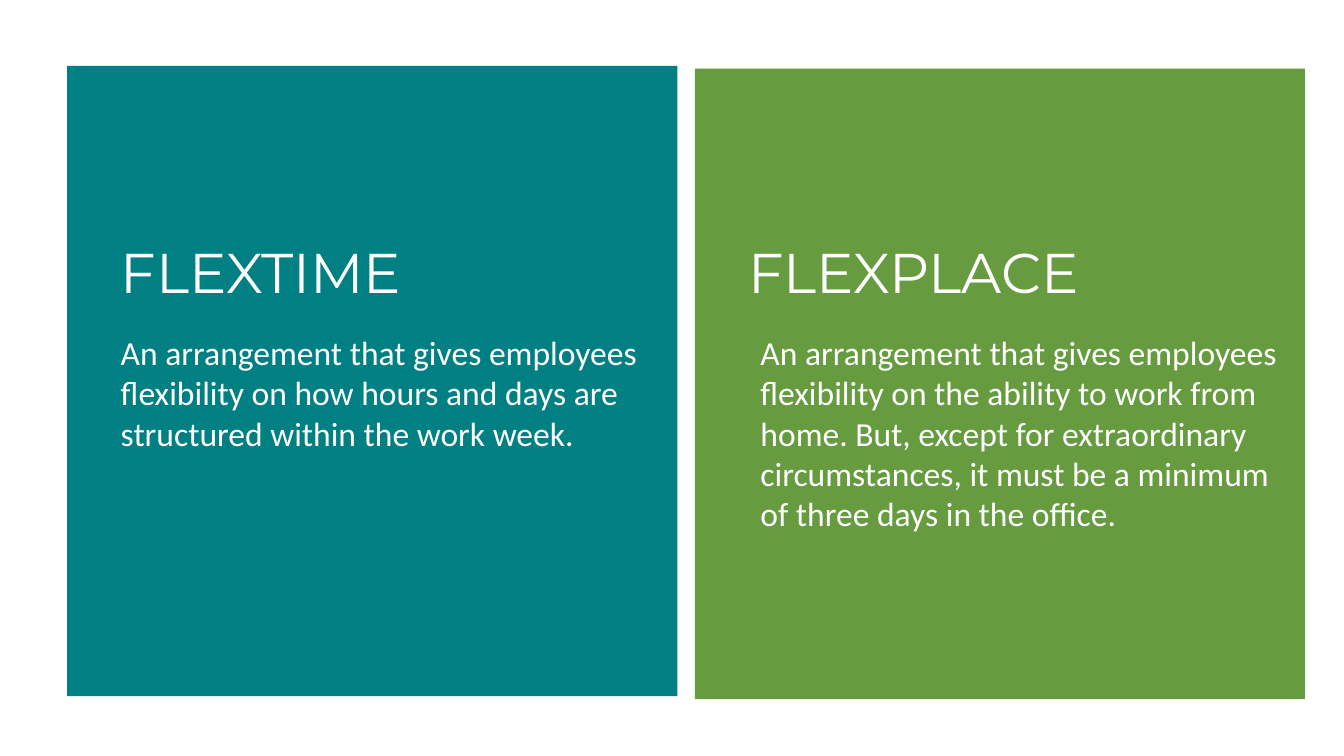
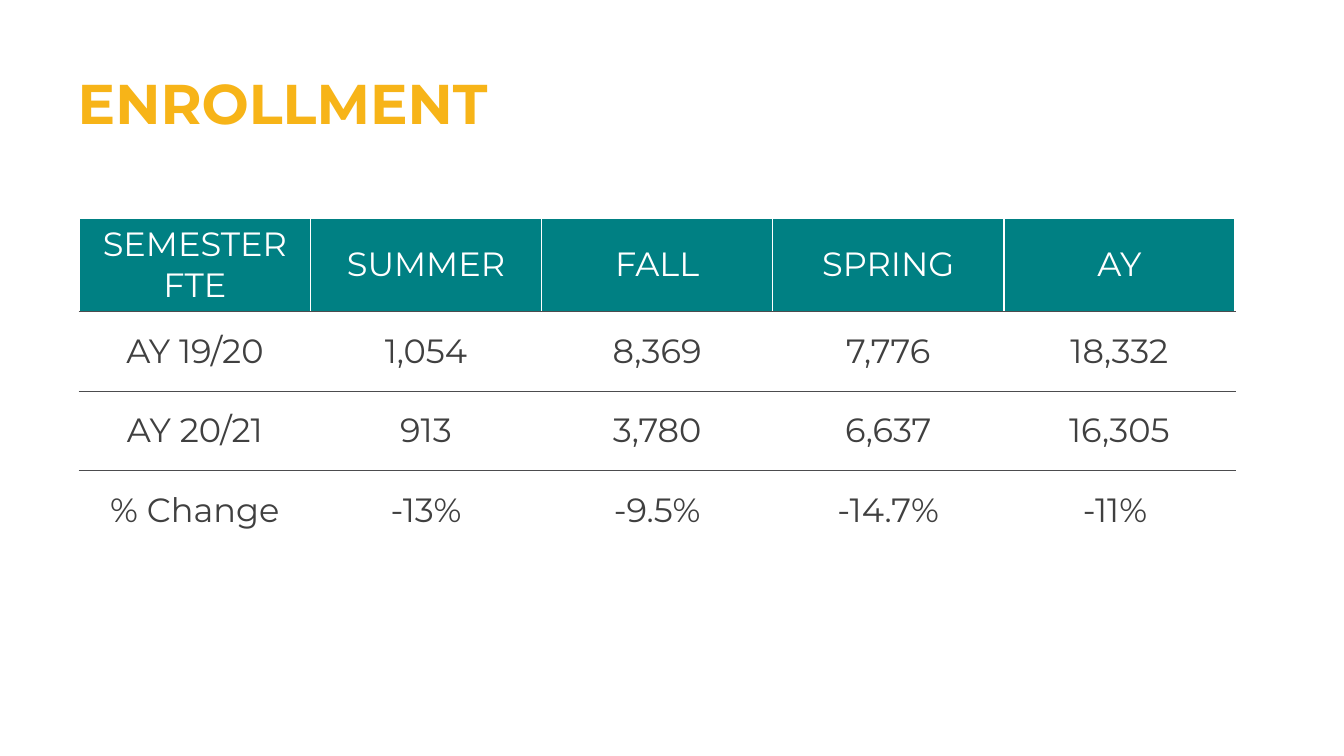
import pptx
import pptx.dml.color
import pptx.enum.shapes
import pptx.enum.text
import pptx.oxml.ns
import pptx.util
from lxml import etree

Inches = pptx.util.Inches
Pt = pptx.util.Pt
PP_ALIGN = pptx.enum.text.PP_ALIGN

# Shared palette and fonts
TEAL, GREEN, GOLD = "008083", "669B40", "F7B418"
WHITE, GREY, RULE = "FFFFFF", "404040", "4C4C4E"
HEAD_FONT, BODY_FONT = "Montserrat", "Calibri"

# Slide content: colour, panel corner, body left, heading, description, height
ARRANGEMENTS = [
    (TEAL, 0.5, 0.49, 0.8, "FLEXTIME",
     "An arrangement that gives employees flexibility on how hours and days "
     "are structured within the work week.", 1.01),
    (GREEN, 5.17, 0.51, 5.56, "FLEXPLACE",
     "An arrangement that gives employees flexibility on the ability to work "
     "from home. But, except for extraordinary circumstances, it must be a "
     "minimum of three days in the office.", 1.62),
]
ENROLLMENT = [
    ["SEMESTER FTE", "SUMMER", "FALL", "SPRING", "AY"],
    ["AY 19/20", "1,054", "8,369", "7,776", "18,332"],
    ["AY 20/21", "913", "3,780", "6,637", "16,305"],
    ["% Change", "-13%", "-9.5%", "-14.7%", "-11% "],
]
COLUMN_WIDTH, ROW_HEIGHT = 1.72, 0.59


def rgb(value):
    return pptx.dml.color.RGBColor.from_string(value)


def write(frame, text, size=18, font=HEAD_FONT, color=WHITE, bold=False,
          align=PP_ALIGN.LEFT):
    paragraph = frame.paragraphs[0]
    paragraph.alignment = align
    run = paragraph.add_run()
    run.text = text
    run.font.size = Pt(size)
    run.font.name = font
    run.font.bold = bold
    run.font.color.rgb = rgb(color)


def add_text(slide, text, left, top, width, height, **style):
    box = slide.shapes.add_textbox(
        Inches(left), Inches(top), Inches(width), Inches(height))
    box.text_frame.word_wrap = True
    box.text_frame.auto_size = pptx.enum.text.MSO_AUTO_SIZE.SHAPE_TO_FIT_TEXT
    write(box.text_frame, text, **style)


def add_heading(slide, text, left, top, width, **style):
    add_text(slide, text, left, top, width, 0.61, size=30, **style)


def add_panel(slide, left, top, color):
    panel = slide.shapes.add_shape(
        pptx.enum.shapes.MSO_SHAPE.RECTANGLE,
        Inches(left), Inches(top), Inches(4.54), Inches(4.69))
    panel.shadow.inherit = False
    panel.fill.solid()
    panel.fill.fore_color.rgb = rgb(color)
    panel.line.fill.background()


def set_borders(cell, top, bottom):
    """Draw white sides and the given top and bottom colours."""
    properties = cell._tc.get_or_add_tcPr()
    qn = pptx.oxml.ns.qn
    edges = [("a:lnL", WHITE), ("a:lnR", WHITE), ("a:lnT", top), ("a:lnB", bottom)]
    for position, (tag, color) in enumerate(edges):
        line = etree.Element(qn(tag), w=str(Pt(0.75 if color == RULE else 1)))
        fill = etree.SubElement(line, qn("a:solidFill"))
        etree.SubElement(fill, qn("a:srgbClr"), val=color)
        properties.insert(position, line)


def add_data_table(slide, rows, left, top):
    column_count = len(rows[0])
    table = slide.shapes.add_table(
        len(rows), column_count, Inches(left), Inches(top),
        Inches(COLUMN_WIDTH * column_count),
        Inches(ROW_HEIGHT * len(rows))).table
    table.horz_banding = False
    for column in table.columns:
        column.width = Inches(COLUMN_WIDTH)
    last = len(rows) - 1
    for r, values in enumerate(rows):
        table.rows[r].height = Inches(ROW_HEIGHT)
        for c, value in enumerate(values):
            cell = table.cell(r, c)
            cell.vertical_anchor = pptx.enum.text.MSO_ANCHOR.MIDDLE
            if r == 0:
                cell.fill.solid()
                cell.fill.fore_color.rgb = rgb(TEAL)
            else:
                cell.fill.background()
            write(cell.text_frame, value, color=GREY if r else WHITE,
                  align=PP_ALIGN.CENTER)
            set_borders(cell, top=RULE if r else WHITE,
                        bottom=WHITE if r == last else RULE)


def build_arrangements(slide):
    for color, left, top, body_left, heading, body, body_height in ARRANGEMENTS:
        add_panel(slide, left, top, color)
        add_heading(slide, heading, left + 0.3, 1.72, 2.92)
        add_text(slide, body, body_left, 2.42, 4.12, body_height, font=BODY_FONT)


def build_enrollment(slide):
    add_heading(slide, "ENROLLMENT", 0.48, 0.46, 4.52, color=GOLD, bold=True)
    add_data_table(slide, ENROLLMENT, 0.59, 1.62)


def main():
    deck = pptx.Presentation()
    # Widescreen, 16:9
    deck.slide_width = Inches(10)
    deck.slide_height = deck.slide_width * 9 // 16
    blank = deck.slide_layouts[6]
    for build in (build_arrangements, build_enrollment):
        build(deck.slides.add_slide(blank))
    deck.save("out.pptx")


if __name__ == "__main__":
    main()
